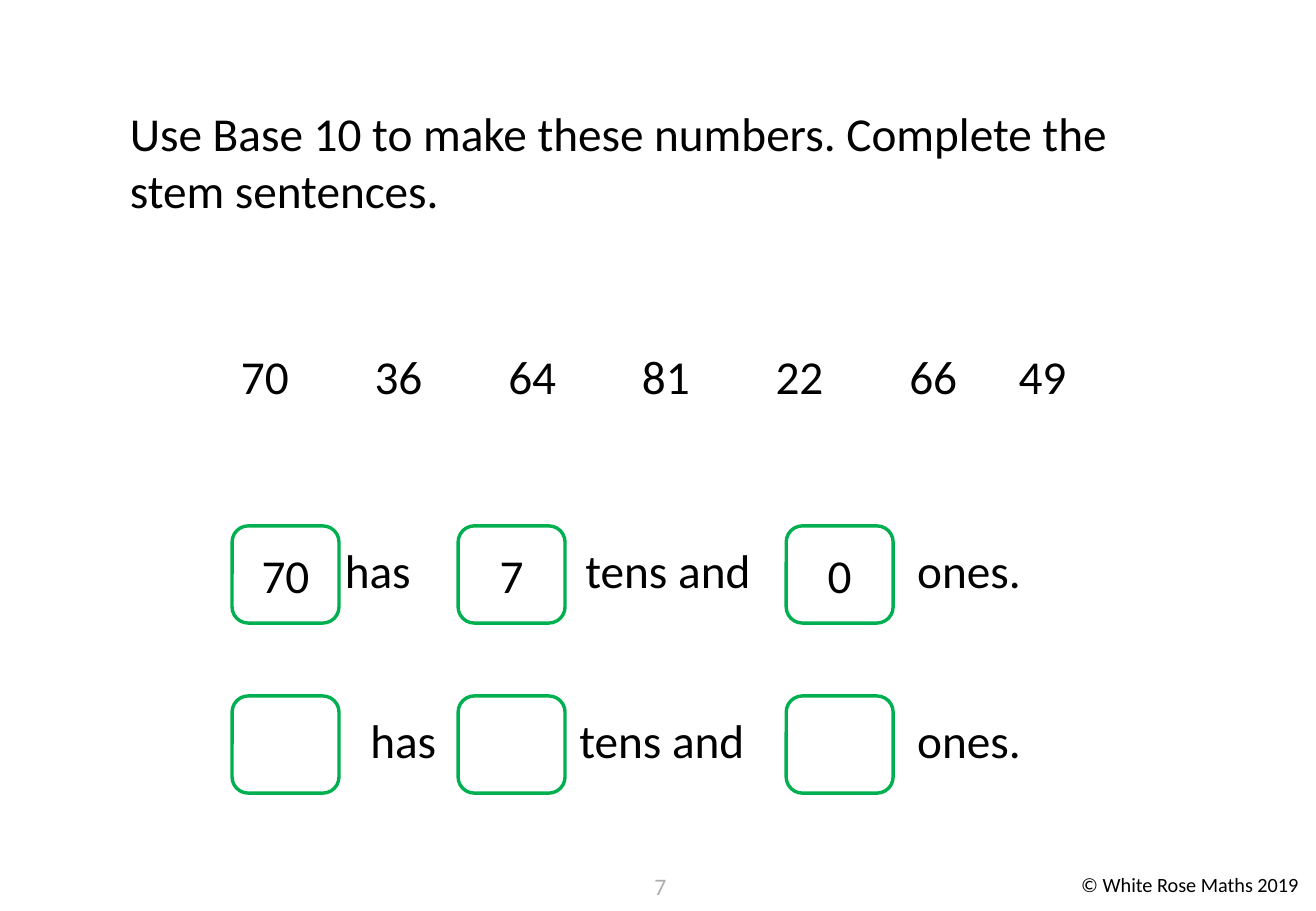
from pptx import Presentation
from pptx.dml.color import RGBColor
from pptx.enum.shapes import MSO_SHAPE as Shape
from pptx.enum.text import MSO_ANCHOR as Anchor, PP_ALIGN as Align
from pptx.util import Pt

PX = 9144  # EMU in one px, 100 px to the inch


class Theme:
    font = "Calibri"
    text = RGBColor(0x00, 0x00, 0x00)
    muted = RGBColor(0xAF, 0xAB, 0xAB)
    outline = RGBColor(0x00, 0xB0, 0x50)
    body_size = Pt(28)
    page_size = Pt(14)
    notice_size = Pt(12)
    outline_width = Pt(2)


NUMBERS = ["70", "36", "64", "81", "22", "66", "49"]
NUMBER_CENTRES = [218 + 110 * i for i in range(6)] + [858]
ANSWER_LEFTS = [191, 377, 647]
STEM_WORDS = ["has", "tens and", "ones."]
ROW_PITCH = 140
# Answers and left edges of the words, one entry for each sentence
STEM_ROWS = [
    (["70", "7", "0"], [274, 472, 745]),
    (["", "", ""], [295, 467, 745]),
]


def emu(*lengths):
    return [length * PX for length in lengths]


def write(shape, text, size=Theme.body_size, color=Theme.text, align=Align.LEFT):
    paragraph = shape.text_frame.paragraphs[0]
    paragraph.text = text
    paragraph.alignment = align
    formats = {"name": Theme.font, "size": size}
    for name, value in formats.items():
        setattr(paragraph.font, name, value)
    paragraph.font.color.rgb = color


def add_text(slide, box, text, **formats):
    shape = slide.shapes.add_textbox(*emu(*box))
    shape.text_frame.word_wrap = True
    write(shape, text, **formats)


def add_answer_box(slide, left, top, answer):
    shape = slide.shapes.add_shape(Shape.ROUNDED_RECTANGLE, *emu(left, top, 88, 80))
    shape.shadow.inherit = False
    shape.fill.background()
    shape.line.color.rgb = Theme.outline
    shape.line.width = Theme.outline_width
    shape.text_frame.vertical_anchor = Anchor.MIDDLE
    if answer:
        write(shape, answer, align=Align.CENTER)


def add_stem_sentence(slide, row, answers, word_lefts):
    offset = row * ROW_PITCH
    for left, answer in zip(ANSWER_LEFTS, answers):
        add_answer_box(slide, left, 433 + offset, answer)
    for left, word in zip(word_lefts, STEM_WORDS):
        add_text(slide, (left, 441 + offset, 180, 57), word)


def main():
    presentation = Presentation()
    presentation.slide_width, presentation.slide_height = emu(1083, 750)
    slide = presentation.slides.add_slide(presentation.slide_layouts[6])

    # Instruction
    add_text(slide, (97, 81, 881, 104),
             "Use Base 10 to make these numbers. Complete the stem sentences.")

    # Numbers to make
    for centre, number in zip(NUMBER_CENTRES, NUMBERS):
        add_text(slide, (centre - 40, 281, 80, 57), number, align=Align.CENTER)

    # Stem sentences
    for row, (answers, word_lefts) in enumerate(STEM_ROWS):
        add_stem_sentence(slide, row, answers, word_lefts)

    # Footer
    add_text(slide, (518, 713, 51, 40), "7", size=Theme.page_size,
             color=Theme.muted, align=Align.CENTER)
    add_text(slide, (880, 713, 203, 30), "© White Rose Maths 2019",
             size=Theme.notice_size)

    presentation.save("out.pptx")


if __name__ == "__main__":
    main()
